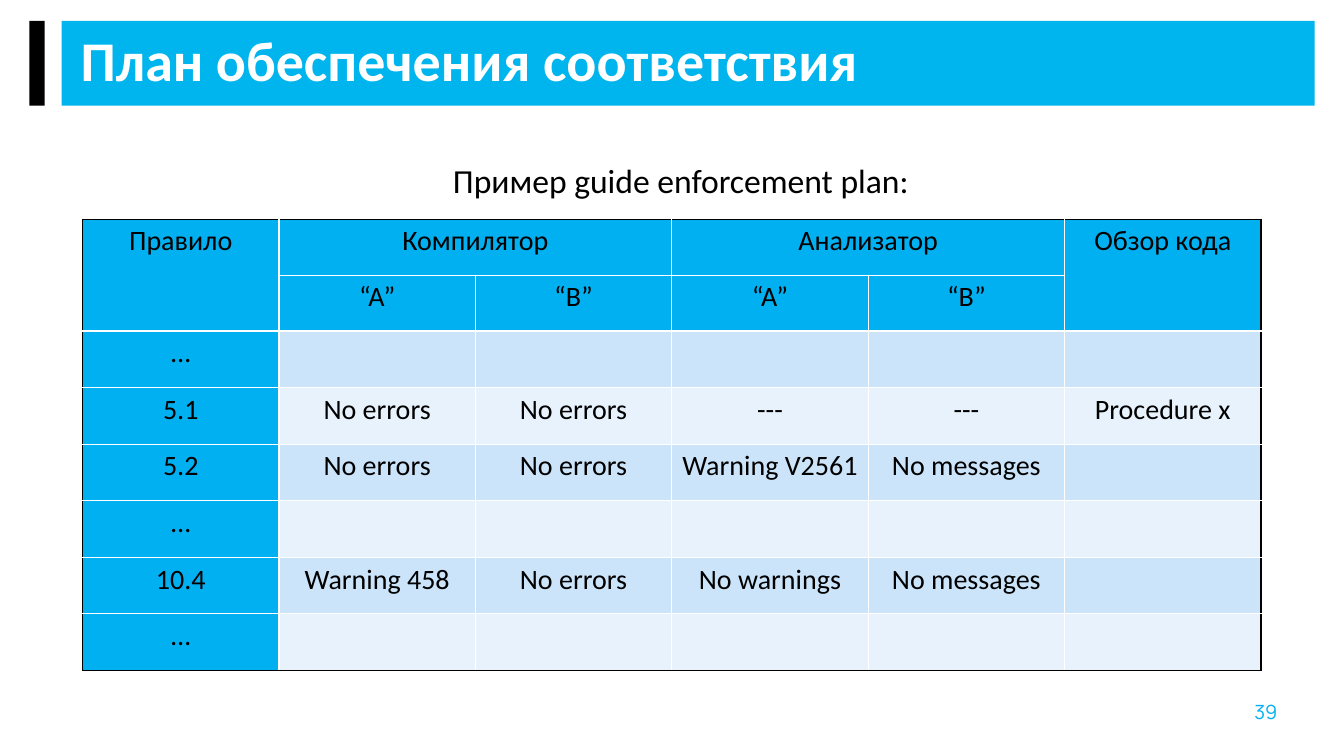
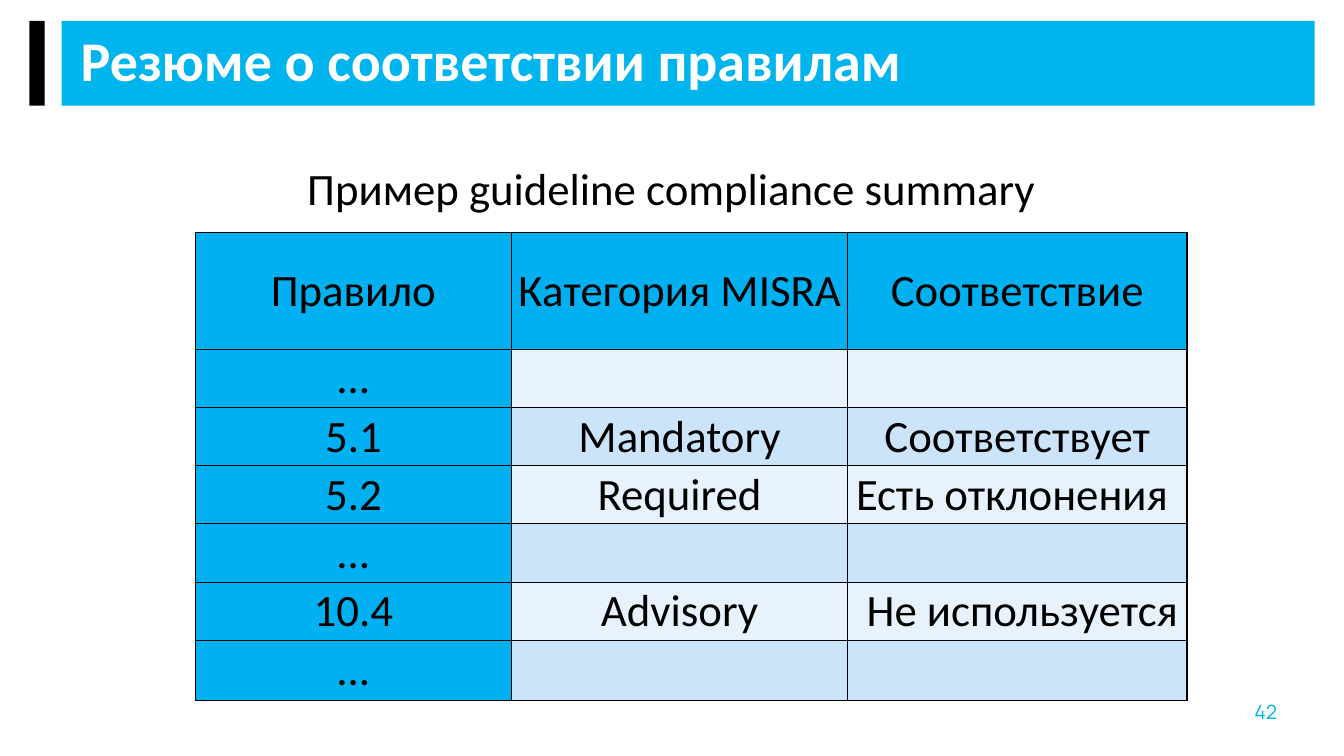
from dataclasses import dataclass

from lxml.etree import SubElement
from pptx import Presentation
from pptx.dml.color import RGBColor
from pptx.enum.shapes import MSO_SHAPE as Preset
from pptx.enum.text import MSO_ANCHOR as Anchor, PP_ALIGN as Align
from pptx.oxml.ns import qn
from pptx.util import Pt


@dataclass(frozen=True)
class Theme:
    band: str = "00B4ED"
    accent: str = "00B0F0"
    even_row: str = "CCE4F9"
    odd_row: str = "E7F2FC"
    black: str = "000000"
    white: str = "FFFFFF"
    text_font: str = "Calibri"
    number_font: str = "Manrope"
    title_size: int = 40
    large_size: int = 32
    caption_size: int = 24
    cell_size: int = 20
    number_size: int = 14


THEME = Theme()
TITLE_ONLY = 5

BANDS = [
    ((44, 15, 895, 60.5), THEME.band),
    ((21, 15, 11, 60.5), THEME.black),
]
TITLE_BOX = (50.4, 20, 872, 31.7)
NUMBER_BOX = (879, 488, 67.7, 55.4)

PLAN_ROWS = [
    ["Правило", "Компилятор", "", "Анализатор", "", "Обзор кода"],
    ["", "“A”", "“B”", "“A”", "“B”", ""],
    ["…", "", "", "", "", ""],
    ["5.1", "No errors", "No errors", "---", "---", "Procedure x"],
    ["5.2", "No errors", "No errors", "Warning V2561", "No messages", ""],
    ["…", "", "", "", "", ""],
    ["10.4", "Warning 458", "No errors", "No warnings", "No messages", ""],
    ["…", "", "", "", "", ""],
]
PLAN_MERGES = [((0, 0), (1, 0)), ((0, 1), (0, 2)), ((0, 3), (0, 4)), ((0, 5), (1, 5))]

SUMMARY_ROWS = [
    ["Правило", "Категория MISRA", "Соответствие"],
    ["…", "", ""],
    ["5.1", "Mandatory", "Соответствует"],
    ["5.2", "Required", "Есть отклонения "],
    ["…", "", ""],
    ["10.4", "Advisory", " Не используется"],
    ["…", "", ""],
]


def points(lengths):
    return [Pt(length) for length in lengths]


def apply(target, values):
    for name, value in values.items():
        setattr(target, name, value)


def write(frame, text, size, color, font=THEME.text_font, bold=False, **para_format):
    """Put one formatted paragraph into a text frame."""
    para = frame.paragraphs[0]
    apply(para, para_format)
    span = para.add_run()
    span.text = text
    apply(span.font, {"name": font, "size": Pt(size), "bold": bold})
    span.font.color.rgb = RGBColor.from_string(color)


def add_bands(layout, page):
    """Draw the title bands and hand them over to the layout all pages share."""
    tree = layout.shapes.element
    for order, (box, color) in enumerate(BANDS):
        band = page.shapes.add_shape(Preset.RECTANGLE, *points(box))
        band.shadow.inherit = False
        band.fill.solid()
        band.fill.fore_color.rgb = RGBColor.from_string(color)
        band.line.fill.background()
        band.element.nvSpPr.cNvPr.set("id", str(100 + order))
        tree.insert(2 + order, band.element)


def set_title(page, text):
    title = page.shapes.title
    apply(title, dict(zip(("left", "top", "width", "height"), points(TITLE_BOX))))
    apply(title.text_frame, {"vertical_anchor": Anchor.TOP, "word_wrap": True})
    write(title.text_frame, text, THEME.title_size, THEME.white, bold=True,
          alignment=Align.LEFT, line_spacing=0.9, space_before=Pt(10))


def add_caption(page, text, box, size):
    frame = page.shapes.add_textbox(*points(box)).text_frame
    frame.word_wrap = True
    write(frame, text, size, THEME.black, alignment=Align.CENTER)


def add_number(page, number):
    circle = page.shapes.add_shape(Preset.OVAL, *points(NUMBER_BOX))
    circle.shadow.inherit = False
    circle.fill.background()
    circle.line.fill.background()
    circle.text_frame.vertical_anchor = Anchor.TOP
    write(circle.text_frame, str(number), THEME.number_size, THEME.accent,
          THEME.number_font, alignment=Align.LEFT)


def set_borders(cell, outer_sides, inner):
    """Draw outer sides as a 1 pt black line, the others as inner (colour, width)."""
    properties = cell._tc.get_or_add_tcPr()
    for side, is_outer in outer_sides.items():
        color, width = (THEME.black, 1) if is_outer else inner
        line = SubElement(properties, qn(f"a:ln{side}"), w=str(Pt(width)))
        SubElement(SubElement(line, qn("a:solidFill")), qn("a:srgbClr"), val=color)


def add_grid(page, rows, corner, widths, heights, size, inner, cell_format,
             header_rows=1, merges=()):
    shape = page.shapes.add_table(len(rows), len(widths), *points(corner),
                                  Pt(sum(widths)), Pt(sum(heights)))
    grid = shape.table
    apply(grid, {"first_row": False, "horz_banding": False})
    for column, width in zip(grid.columns, widths):
        column.width = Pt(width)
    for row, height in zip(grid.rows, heights):
        row.height = Pt(height)
    for r, texts in enumerate(rows):
        for c, text in enumerate(texts):
            cell = grid.cell(r, c)
            apply(cell, cell_format)
            set_borders(cell, {"L": c == 0, "R": c == len(widths) - 1,
                               "T": r == 0, "B": r == len(rows) - 1}, inner)
            stripe = THEME.odd_row if r % 2 else THEME.even_row
            is_heading = r < header_rows or c == 0
            cell.fill.solid()
            cell.fill.fore_color.rgb = RGBColor.from_string(
                THEME.accent if is_heading else stripe)
            if text:
                write(cell.text_frame, text, size, THEME.black, alignment=Align.CENTER)
    for first, last in merges:
        grid.cell(*first).merge(grid.cell(*last))


def add_page(deck, title, number):
    page = deck.slides.add_slide(deck.slide_layouts[TITLE_ONLY])
    set_title(page, title)
    add_number(page, number)
    return page


def main():
    deck = Presentation()
    apply(deck, {"slide_width": Pt(960), "slide_height": Pt(540)})

    plan = add_page(deck, "План обеспечения соответствия", 39)
    add_bands(deck.slide_layouts[TITLE_ONLY], plan)
    add_caption(plan, "Пример guide enforcement plan:", (67.7, 111, 837.4, 62),
                THEME.caption_size)
    add_grid(plan, PLAN_ROWS, (59, 156.5), [140.3] * 6, [40] * 2 + [40.4] * 6,
             THEME.cell_size, (THEME.white, 1), {"vertical_anchor": Anchor.TOP},
             header_rows=2, merges=PLAN_MERGES)

    summary = add_page(deck, "Резюме о соответствии правилам", 42)
    add_caption(summary, "Пример guideline compliance summary",
                (61, 111, 837.4, 55.4), THEME.large_size)
    tight = {f"margin_{side}": Pt(0.7) for side in ("left", "top", "right")}
    add_grid(summary, SUMMARY_ROWS, (139.5, 166.3), [226, 240, 242.5],
             [83] + [41.6] * 5 + [43], THEME.large_size, (THEME.black, 0.5),
             {"vertical_anchor": Anchor.MIDDLE, "margin_bottom": Pt(0), **tight})

    deck.save("out.pptx")


if __name__ == "__main__":
    main()
